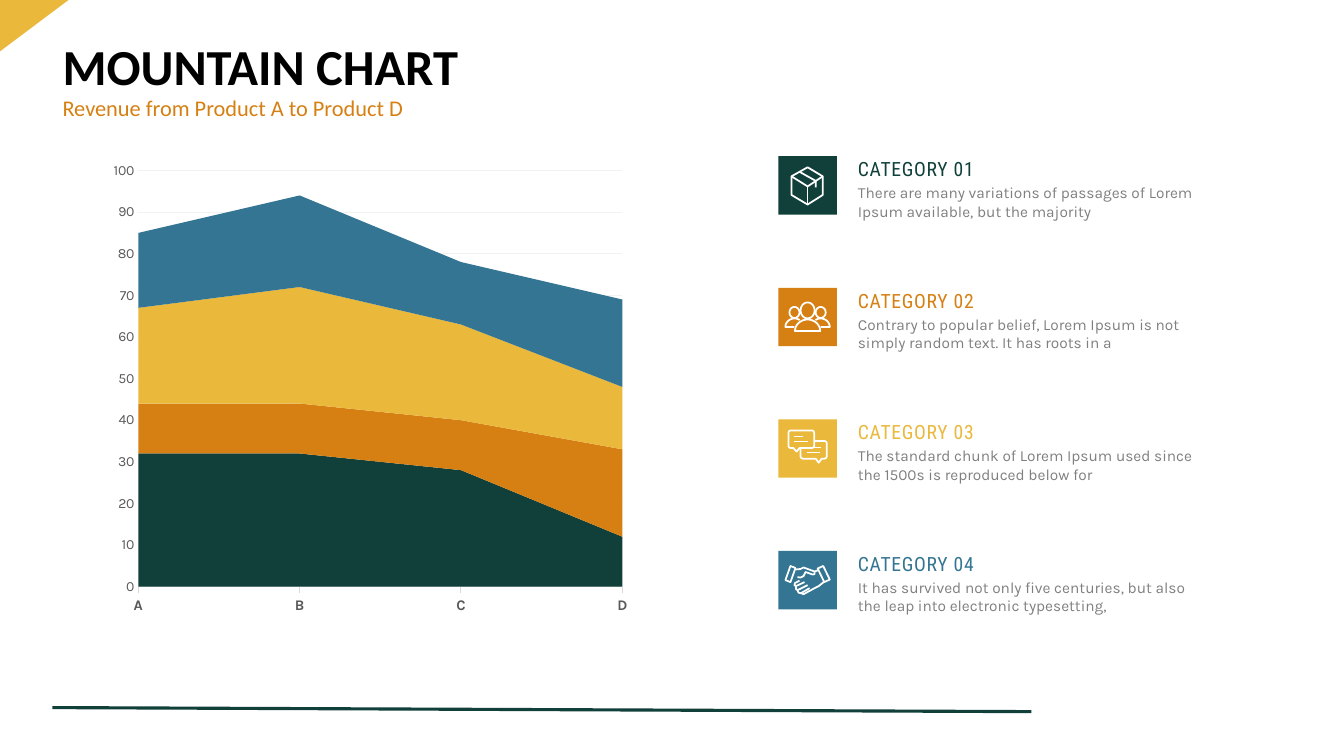
import math

import pptx
import pptx.chart.data
import pptx.dml.color
import pptx.enum.chart
import pptx.enum.shapes
import pptx.enum.text
import pptx.oxml
import pptx.oxml.ns
import pptx.util

WIDTH, HEIGHT = 13.33, 7.5
GREEN, ORANGE, YELLOW, BLUE = PALETTE = ["11403A", "D68013", "EAB83B", "347593"]
WHITE, GREY = "FFFFFF", "7F7F7F"
TILE, ROW_PITCH = 0.58, 1.305
Inches, Pt = pptx.util.Inches, pptx.util.Pt

CATEGORIES = [
    ("CATEGORY 01", "There are many variations of passages of Lorem Ipsum available, but the majority"),
    ("CATEGORY 02", "Contrary to popular belief, Lorem Ipsum is not simply random text. It has roots in a"),
    ("CATEGORY 03", "The standard chunk of Lorem Ipsum used since the 1500s is reproduced below for"),
    ("CATEGORY 04", "It has survived not only five centuries, but also the leap into electronic typesetting,"),
]
SERIES = [(32, 32, 28, 12), (12, 12, 12, 21), (23, 28, 23, 15), (18, 22, 15, 21)]


def colour(value):
    return pptx.dml.color.RGBColor.from_string(value)


def style_font(font, name, size, value, bold=False):
    font.name, font.size, font.bold = name, Pt(size), bold
    font.color.rgb = colour(value)


def place(shape, left, top, width, height):
    shape.left, shape.top = Inches(left), Inches(top)
    shape.width, shape.height = Inches(width), Inches(height)


# Icon outlines: lists of strokes, in hundredths of an inch from the tile corner
def arc(x, y, radius_x, radius_y, start, end, steps=16):
    angles = [math.radians(start + (end - start) * step / steps) for step in range(steps + 1)]
    return [(x + radius_x * math.cos(a), y + radius_y * math.sin(a)) for a in angles]


def parcel_icon():
    return [
        [(29, 11), (44, 20), (44, 38.5), (29, 48), (13, 38.5), (13, 20), (29, 11)],
        [(13, 20), (29, 30), (44, 20)],
        [(29, 30), (29, 48)],
        [(21, 15.5), (37, 24.5), (37, 31)],
    ]


def people_icon():
    body = arc(29, 43, 12.5, 11.5, 180, 360)
    side = [
        arc(16, 24.5, 5, 5.5, 0, 360),
        [(16, 39)] + arc(16, 39, 9, 8.5, 180, 305),
    ]
    mirrored = [[(58 - x, y) for x, y in stroke] for stroke in side]
    return [arc(29, 22.5, 7, 8, 0, 360), body + body[:1]] + side + mirrored


def chat_icon():
    front = (arc(12.5, 13.5, 2.5, 2.5, 180, 270) + arc(33, 13.5, 2.5, 2.5, 270, 360)
             + arc(33, 26, 2.5, 2.5, 0, 90) + [(21, 28.5), (18, 32), (15, 28.5)]
             + arc(12.5, 26, 2.5, 2.5, 90, 180))
    back = ([(35.5, 21.5)] + arc(45.5, 24, 2.5, 2.5, 270, 360)
            + arc(45.5, 36.5, 2.5, 2.5, 0, 90) + [(43, 39), (40, 43), (37, 39)]
            + arc(24.5, 36.5, 2.5, 2.5, 90, 180) + [(22, 28.5)])
    lines = [(16, 24, 17), (16, 29, 22), (33, 42, 28), (28, 41.5, 33)]
    return [front + front[:1], back] + [[(x1, y), (x2, y)] for x1, x2, y in lines]


def handshake_icon():
    return [
        [(12, 15), (17, 17), (12, 31), (7, 29), (12, 15)],
        [(39, 17.5), (44.5, 15), (51, 28.5), (45.5, 31), (39, 17.5)],
        [(17, 18.5), (22, 18), (25, 16.5), (36, 20.5), (36, 23), (34, 23.5),
         (27, 21), (25, 25), (22, 26.5), (19, 26)],
        [(36, 20.5), (40, 19)],
        [(45, 31), (40, 35), (36, 37), (25, 43), (22.5, 42)],
        [(21, 29.5), (16.5, 32), (16, 34), (17.5, 35), (26, 31)],
        [(17.5, 35), (17.5, 38), (19, 39), (29, 34)],
        [(19, 39), (20, 41.5), (22.5, 42), (31, 37)],
    ]


ICONS = [parcel_icon, people_icon, chat_icon, handshake_icon]


def draw_icon(page, left, top, strokes):
    def points(stroke):
        return [(Inches(left + x / 100), Inches(top + y / 100)) for x, y in stroke]

    builder = page.shapes.build_freeform(*points(strokes[0])[0])
    for index, stroke in enumerate(strokes):
        first, *rest = points(stroke)
        if index:
            builder.move_to(*first)
        builder.add_line_segments(rest, close=False)
    icon = builder.convert_to_shape()
    icon.shadow.inherit = False
    icon.fill.background()
    icon.line.color.rgb = colour(WHITE)
    icon.line.width = Pt(1.25)


# Corner triangle and footer line
def add_decoration(page):
    corner = page.shapes.add_shape(pptx.enum.shapes.MSO_SHAPE.RIGHT_TRIANGLE,
                                   0, 0, Inches(0.68), Inches(0.51))
    corner.shadow.inherit = False
    corner.fill.solid()
    corner.fill.fore_color.rgb = colour(YELLOW)
    corner.line.fill.background()
    corner._element.spPr.xfrm.set("flipV", "1")
    rule = page.shapes.add_connector(pptx.enum.shapes.MSO_CONNECTOR.STRAIGHT,
                                     Inches(0.52), Inches(7.02), Inches(10.23), Inches(7.06))
    rule.line.color.rgb = colour(GREEN)
    rule.line.width = Pt(2.25)
    rule._element.spPr.append(pptx.oxml.parse_xml(
        "<a:effectLst %s/>" % pptx.oxml.ns.nsdecls("a")))


# Title and subtitle
def add_heading(page, left, top, width):
    title, subtitle = page.shapes.title, page.placeholders[1]
    place(title, left, top, width, 0.6)
    place(subtitle, left, top + 0.5, width, 0.39)
    rows = [(title, "MOUNTAIN CHART", 36, "000000", True),
            (subtitle, "Revenue from Product A to Product D", 16, ORANGE, False)]
    for box, text, size, value, bold in rows:
        frame = box.text_frame
        frame.text = text
        frame.auto_size = pptx.enum.text.MSO_AUTO_SIZE.NONE
        frame.vertical_anchor = pptx.enum.text.MSO_ANCHOR.MIDDLE
        para = frame.paragraphs[0]
        para.alignment = pptx.enum.text.PP_ALIGN.LEFT
        para.line_spacing, para.space_before = 0.9, Pt(0)
        style_font(para.font, "Calibri", size, value, bold)


# Stacked area chart
def add_mountain_chart(page, left, top, width, height):
    data = pptx.chart.data.CategoryChartData()
    data.categories = list("ABCD")
    for number, values in enumerate(SERIES, 1):
        data.add_series(f"Series {number}", values)
    chart = page.shapes.add_chart(pptx.enum.chart.XL_CHART_TYPE.AREA_STACKED, Inches(left),
                                  Inches(top), Inches(width), Inches(height), data).chart
    chart.has_legend = chart.has_title = False
    style_font(chart.font, "Karla", 10, "000000")
    chart.plots[0].vary_by_categories = False
    for series, value in zip(chart.plots[0].series, PALETTE):
        series.format.fill.solid()
        series.format.fill.fore_color.rgb = colour(value)

    ticks = pptx.enum.chart.XL_TICK_MARK
    letters, scale = chart.category_axis, chart.value_axis
    letters.has_major_gridlines = False
    letters.major_tick_mark, scale.major_tick_mark = ticks.OUTSIDE, ticks.NONE
    letters.minor_tick_mark = scale.minor_tick_mark = ticks.NONE
    style_font(letters.tick_labels.font, "Karla", 10.5, "595959", True)
    style_font(scale.tick_labels.font, "Karla", 10, "595959")
    scale.minimum_scale, scale.maximum_scale, scale.major_unit = 0, 100, 10
    scale.format.line.fill.background()
    scale.has_major_gridlines = True
    for line, value in [(letters.format.line, "D9D9D9"),
                        (scale.major_gridlines.format.line, "F2F2F2")]:
        line.color.rgb = colour(value)
        line.width = Pt(0.75)
    # Areas start on the axis itself
    for crossing in scale._element.findall(pptx.oxml.ns.qn("c:crossBetween")):
        crossing.set("val", "midCat")


# One category: icon tile, heading and description
def add_category(page, left, top, heading, description, value, icon):
    tile = page.shapes.add_shape(pptx.enum.shapes.MSO_SHAPE.RECTANGLE, Inches(left),
                                 Inches(top), Inches(TILE), Inches(TILE))
    tile.shadow.inherit = False
    tile.fill.solid()
    tile.fill.fore_color.rgb = colour(value)
    tile.line.fill.background()
    draw_icon(page, left, top, icon())
    for text, offset, height, name, size, ink in [
            (heading, -0.04, 0.37, "Roboto Condensed", 14, value),
            (description, 0.22, 0.52, "Karla", 11, GREY)]:
        box = page.shapes.add_textbox(Inches(left + 0.69), Inches(top + offset),
                                      Inches(3.71), Inches(height))
        box.text_frame.word_wrap = True
        para = box.text_frame.paragraphs[0]
        span = para.add_run()
        span.text = text
        style_font(para.font, name, size, ink)
        if text == heading:
            span._r.get_or_add_rPr().set("spc", "50")


def main():
    deck = pptx.Presentation()
    deck.slide_width, deck.slide_height = Inches(WIDTH), Inches(HEIGHT)
    page = deck.slides.add_slide(deck.slide_layouts[2])
    add_decoration(page)
    add_heading(page, 0.52, 0.39, 12.29)
    add_mountain_chart(page, 1.02, 1.52, 5.31, 4.67)
    for row, (words, value, icon) in enumerate(zip(CATEGORIES, PALETTE, ICONS)):
        add_category(page, 7.72, 1.55 + row * ROW_PITCH, *words, value, icon)
    deck.save("out.pptx")


if __name__ == "__main__":
    main()
